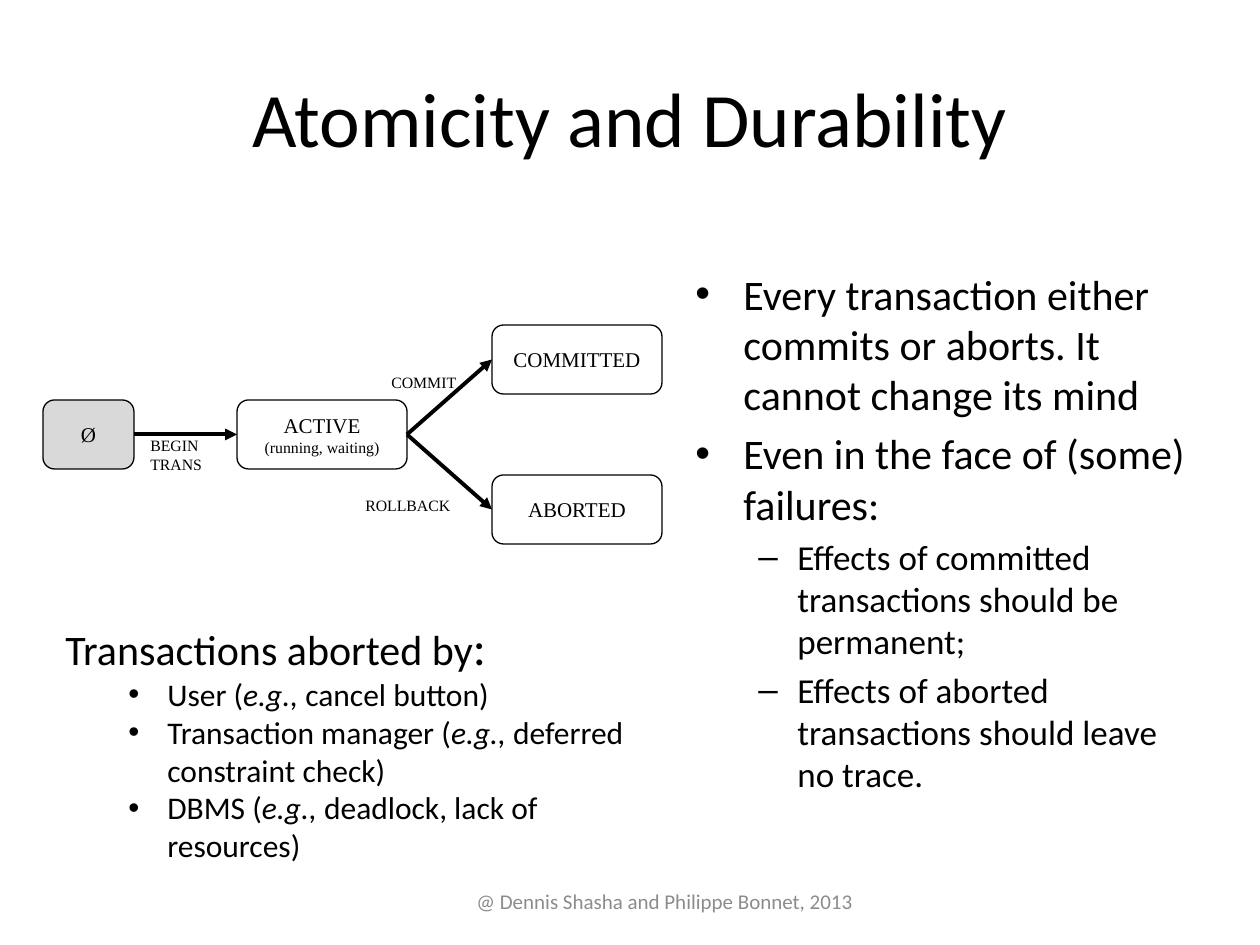
from lxml.etree import SubElement
from pptx import Presentation
from pptx.dml.color import RGBColor
from pptx.enum.shapes import MSO_CONNECTOR as CONNECTOR, MSO_SHAPE as SHAPE
from pptx.enum.text import MSO_ANCHOR as ANCHOR, PP_ALIGN as ALIGN
from pptx.oxml.ns import qn
from pptx.util import Emu, Pt

SANS, SERIF = "Calibri", "Times New Roman"
BLACK, GRAY, FOOTER_GRAY = "000000", "D9D9D9", "8C8C8C"
TOP, RIGHT, LEFT = 0, 3, 1
# Hanging indents of the two list levels: left margin and hang, in px
INDENTS = {0: (48, 48), 1: (102, 39)}


def px(length):
    return Emu(round(length * 914400 / 126))


def color(hex_string):
    return RGBColor.from_string(hex_string)


def style(font, size, name=SANS, ink=BLACK):
    font.size, font.name = Pt(size), name
    font.color.rgb = color(ink)


def style_paragraph(paragraph, size, name=SANS, ink=BLACK):
    for run in paragraph.runs:
        style(run.font, size, name, ink)


def add_text(slide, left, top, width, height, wrap=True):
    frame = slide.shapes.add_textbox(px(left), px(top), px(width), px(height)).text_frame
    frame.word_wrap = wrap
    return frame


def add_bullet(paragraph, level, mark):
    margin, hang = INDENTS[level]
    paragraph.level = level
    properties = paragraph._p.get_or_add_pPr()
    properties.set("marL", str(px(margin)))
    properties.set("indent", str(-px(hang)))
    SubElement(properties, qn("a:buFont")).set("typeface", "Arial")
    SubElement(properties, qn("a:buChar")).set("char", mark)


def add_title(slide, left, top, width, height):
    title = slide.shapes.title
    title.left, title.top, title.width, title.height = map(px, (left, top, width, height))
    title.text_frame.text = "Atomicity and Durability"
    title.text_frame.vertical_anchor = ANCHOR.MIDDLE
    heading = title.text_frame.paragraphs[0]
    heading.alignment = ALIGN.CENTER
    style_paragraph(heading, 44)


def add_footer(slide, left, top, width, height):
    frame = add_text(slide, left, top, width, height)
    frame.text = "@ Dennis Shasha and Philippe Bonnet, 2013 "
    frame.vertical_anchor = ANCHOR.MIDDLE
    frame.paragraphs[0].alignment = ALIGN.CENTER
    style_paragraph(frame.paragraphs[0], 12, ink=FOOTER_GRAY)


def add_principles(slide, left, top, width, height):
    principles = [
        (0, "Every transaction either commits or aborts. It cannot change its mind"),
        (0, "Even in the face of (some) failures:"),
        (1, "Effects of committed transactions should be permanent;"),
        (1, "Effects of aborted transactions should leave no trace."),
    ]
    frame = add_text(slide, left, top, width, height)
    frame.text = "\n".join(text for _, text in principles)
    for paragraph, (level, _) in zip(frame.paragraphs, principles):
        size = (24, 20)[level]
        paragraph.space_before = Pt(size * 0.2)
        add_bullet(paragraph, level, "•–"[level])
        style_paragraph(paragraph, size)


def add_state(slide, left, top, width, name, note=None, fill=None):
    state = slide.shapes.add_shape(SHAPE.ROUNDED_RECTANGLE,
                                   px(left), px(top), px(width), px(69))
    state.shadow.inherit = False
    if fill:
        state.fill.solid()
        state.fill.fore_color.rgb = color(fill)
    else:
        state.fill.background()
    state.line.color.rgb = color(BLACK)
    state.line.width = Pt(0.75)
    frame = state.text_frame
    frame.word_wrap = False
    frame.vertical_anchor = ANCHOR.MIDDLE
    frame.text = f"{name}\n{note}" if note else name
    for paragraph, size in zip(frame.paragraphs, (12, 9)):
        paragraph.alignment = ALIGN.CENTER
        style_paragraph(paragraph, size, SERIF)
    return state


def add_transition(slide, source, target):
    arrow = slide.shapes.add_connector(CONNECTOR.STRAIGHT, 0, 0, 0, 0)
    arrow.begin_connect(source, RIGHT)
    arrow.end_connect(target, LEFT)
    arrow.line.color.rgb = color(BLACK)
    arrow.line.width = Pt(2.25)
    SubElement(arrow.line._get_or_add_ln(), qn("a:tailEnd")).set("type", "triangle")
    SubElement(arrow._element.spPr, qn("a:effectLst"))


def add_state_diagram(slide, left, top):
    # States: the two outcomes lie evenly above and below the active row
    row, step, width = top + 75, 75, 170
    outcome = left + 449
    active = add_state(slide, left + 194, row, width, "ACTIVE", "(running, waiting)")
    aborted = add_state(slide, outcome, row + step, width, "ABORTED")
    committed = add_state(slide, outcome, row - step, width, "COMMITTED")
    start = add_state(slide, left, row, 91, "Ø", fill=GRAY)

    # Transitions
    for source, target in ((start, active), (active, committed), (active, aborted)):
        add_transition(slide, source, target)

    # Transition labels
    for x, y, w, h, text in ((336, 42, 91, 32, "COMMIT"),
                             (310, 165, 111, 32, "ROLLBACK"),
                             (95, 105, 77, 50, "BEGIN\vTRANS")):
        label = add_text(slide, left + x, top + y, w, h, wrap=False)
        label.text = text
        style_paragraph(label.paragraphs[0], 9, SERIF)


def add_abort_causes(slide, left, top, width, height):
    # Asterisks enclose the italic parts
    causes = [
        "User (*e.g.,* cancel button)",
        "Transaction manager (*e.g., *deferred constraint check)",
        "DBMS (*e.g.,* deadlock, lack of resources)",
    ]
    frame = add_text(slide, left, top, width, height)
    heading = frame.paragraphs[0]
    for text, size in (("Transactions aborted by", 24), (":", 28)):
        run = heading.add_run()
        run.text = text
        style(run.font, size)
    for cause in causes:
        paragraph = frame.add_paragraph()
        add_bullet(paragraph, 1, "•")
        for index, part in enumerate(cause.split("*")):
            run = paragraph.add_run()
            run.text = part
            run.font.italic = index % 2 == 1
        style_paragraph(paragraph, 18)


def main():
    deck = Presentation()
    deck.slide_width, deck.slide_height = px(1260), px(945)
    slide = deck.slides.add_slide(deck.slide_layouts[5])
    add_title(slide, 63, 38, 1134, 158)
    add_footer(slide, 431, 876, 472, 50)
    add_principles(slide, 683, 262, 525, 567)
    add_state_diagram(slide, 43, 325)
    add_abort_causes(slide, 53, 610, 610, 301)
    deck.save("out.pptx")


if __name__ == "__main__":
    main()
